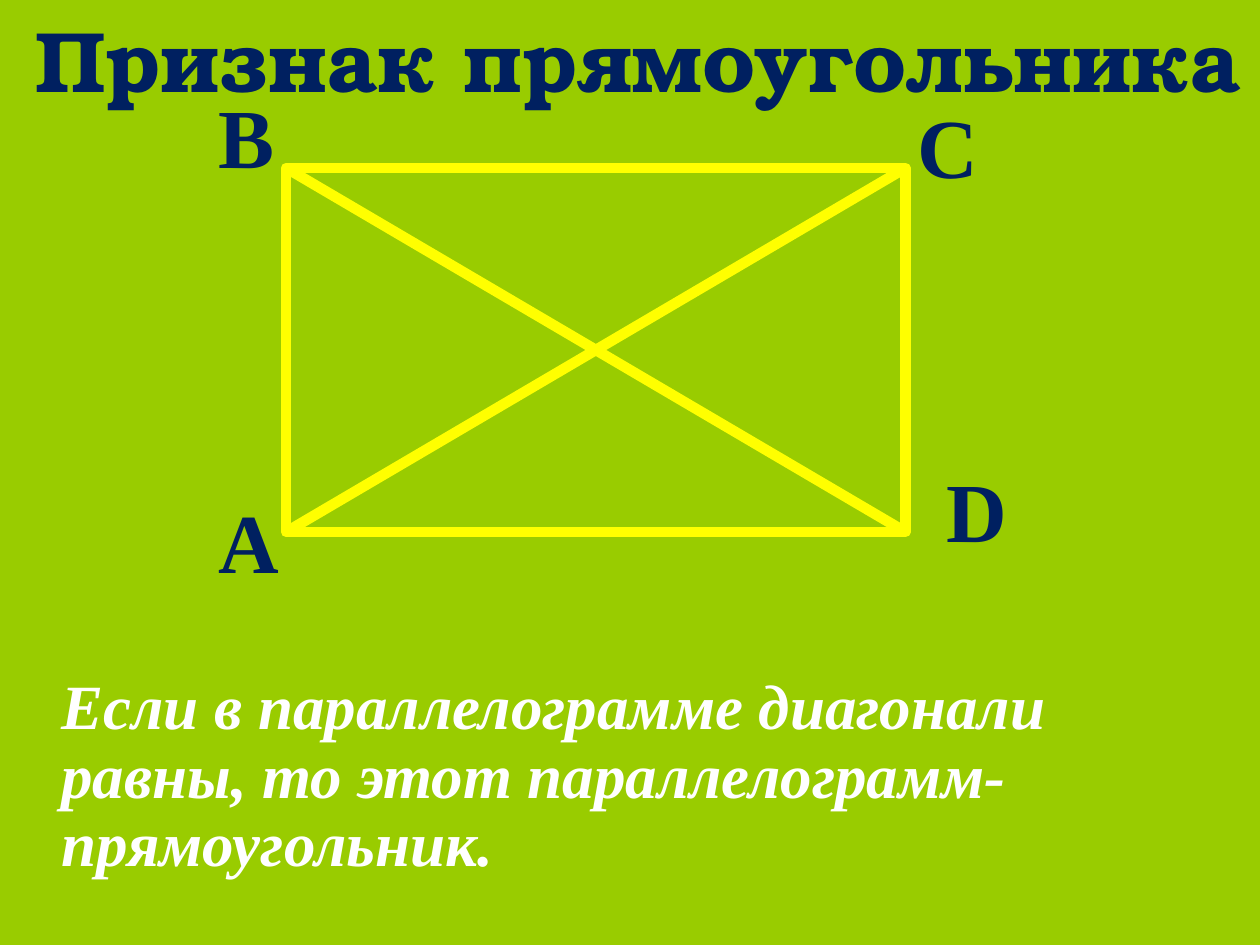
from lxml.etree import SubElement
from pptx import Presentation
from pptx.dml.color import RGBColor
from pptx.enum.shapes import MSO_CONNECTOR as Connector, MSO_SHAPE as Shape
from pptx.enum.text import MSO_ANCHOR as Anchor, MSO_AUTO_SIZE as AutoSize, PP_ALIGN as Align
from pptx.oxml.ns import qn
from pptx.util import Pt

# Content
TITLE = "Признак прямоугольника"
THEOREM = ("Если в параллелограмме диагонали равны, "
           "то этот параллелограмм-прямоугольник.")
VERTICES = [("А", 118, 276), ("В", 118, 44.5), ("С", 517.5, 50.5), ("D", 534, 258.5)]

# Rectangle sides, in points
LEFT, TOP, RIGHT, BOTTOM = 163.5, 96, 517.5, 304
DIAGONALS = [(RIGHT, BOTTOM, LEFT, TOP), (LEFT, BOTTOM, RIGHT, TOP)]

GREEN = RGBColor(0x99, 0xCC, 0x00)
YELLOW = RGBColor(0xFF, 0xFF, 0x00)
NAVY = RGBColor(0x00, 0x20, 0x60)
WHITE = RGBColor(0xFF, 0xFF, 0xFF)
SERIF = "Times New Roman"


def write(frame, text, size, color, name=SERIF, italic=False):
    frame.word_wrap = True
    frame.auto_size = AutoSize.NONE
    frame.vertical_anchor = Anchor.TOP
    para = frame.paragraphs[0]
    span = para.add_run()
    span.text = text
    font = span.font
    font.name, font.size, font.bold, font.italic = name, Pt(size), True, italic
    font.color.rgb = color
    return para


def add_text(page, place, *args, **kwargs):
    box = page.shapes.add_textbox(*map(Pt, place))
    return write(box.text_frame, *args, **kwargs)


def set_outline(shape):
    shape.line.color.rgb = YELLOW
    shape.line.width = Pt(6)


deck = Presentation()
deck.slide_width, deck.slide_height = Pt(720), Pt(540)
page = deck.slides.add_slide(deck.slide_layouts[5])
page.background.fill.solid()
page.background.fill.fore_color.rgb = GREEN

# Diagonals
for ends in DIAGONALS:
    diagonal = page.shapes.add_connector(Connector.STRAIGHT, *map(Pt, ends))
    set_outline(diagonal)
    SubElement(diagonal.line._get_or_add_ln().getparent(), qn("a:effectLst"))

# Title
title = page.shapes.title
title.left, title.top, title.width, title.height = Pt(4.5), Pt(0), Pt(720), Pt(67)
write(title.text_frame, TITLE, 49, NAVY, "TeX Gyre Bonum").alignment = Align.CENTER

# Rectangle and its vertices
rectangle = page.shapes.add_shape(
    Shape.RECTANGLE, Pt(LEFT), Pt(TOP), Pt(RIGHT - LEFT), Pt(BOTTOM - TOP))
rectangle.shadow.inherit = False
rectangle.fill.background()
set_outline(rectangle)
for letter, x, y in VERTICES:
    add_text(page, (x, y, 56, 65.5), letter, 48, NAVY)

# Theorem
theorem = add_text(page, (28, 382.5, 646.5, 125), THEOREM, 36, WHITE, italic=True)
theorem.line_spacing = 0.9

deck.save("out.pptx")
